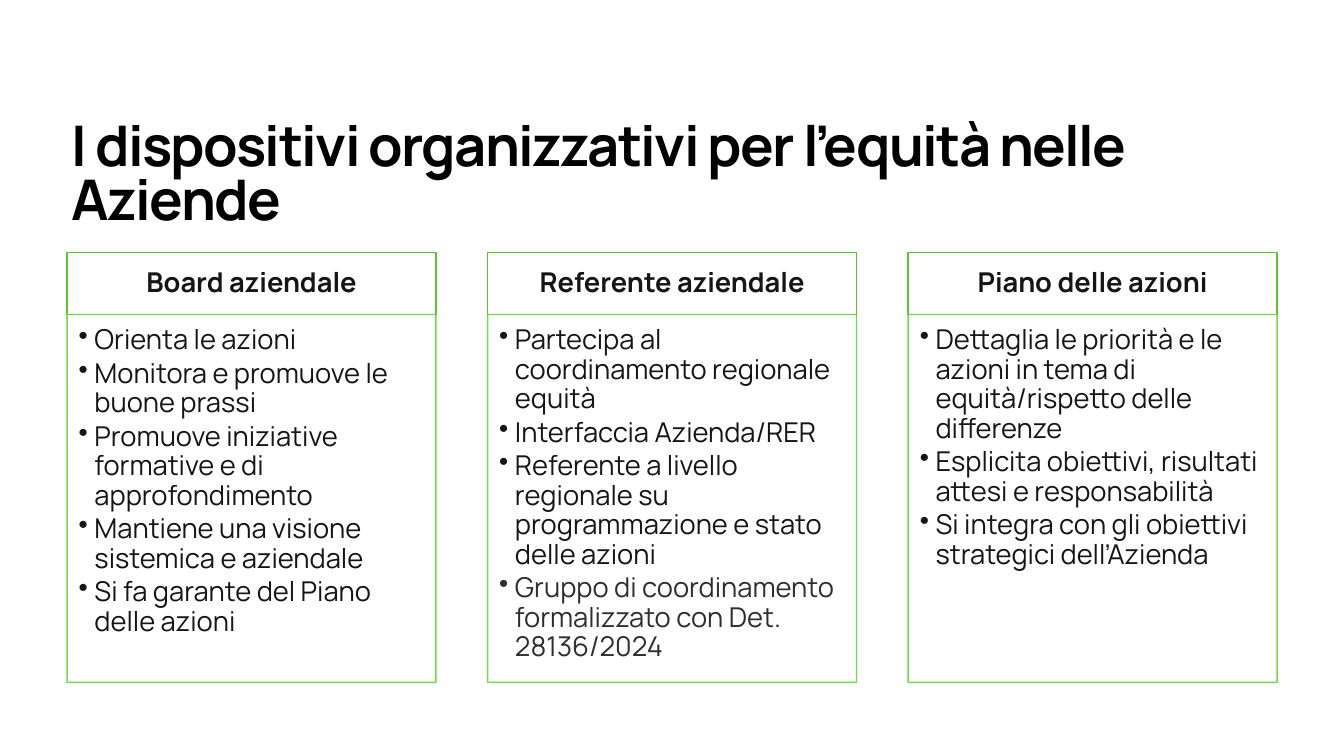
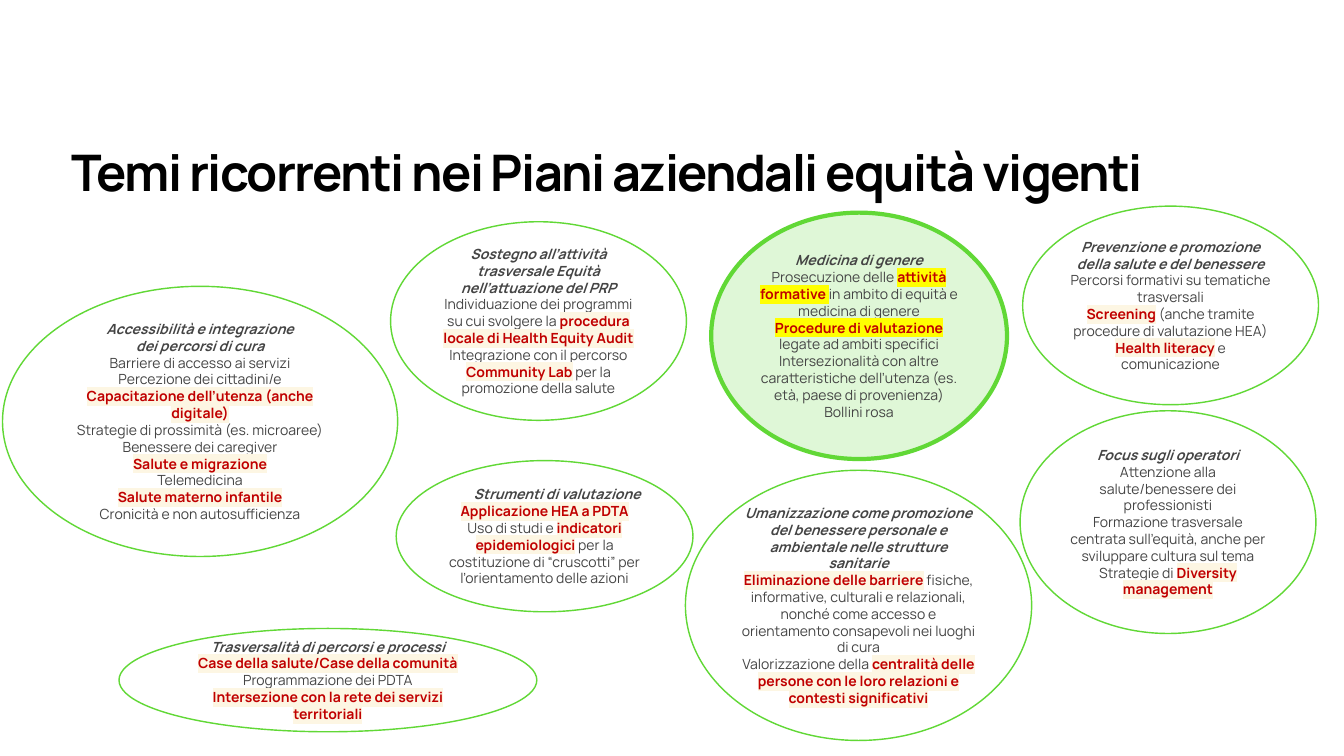
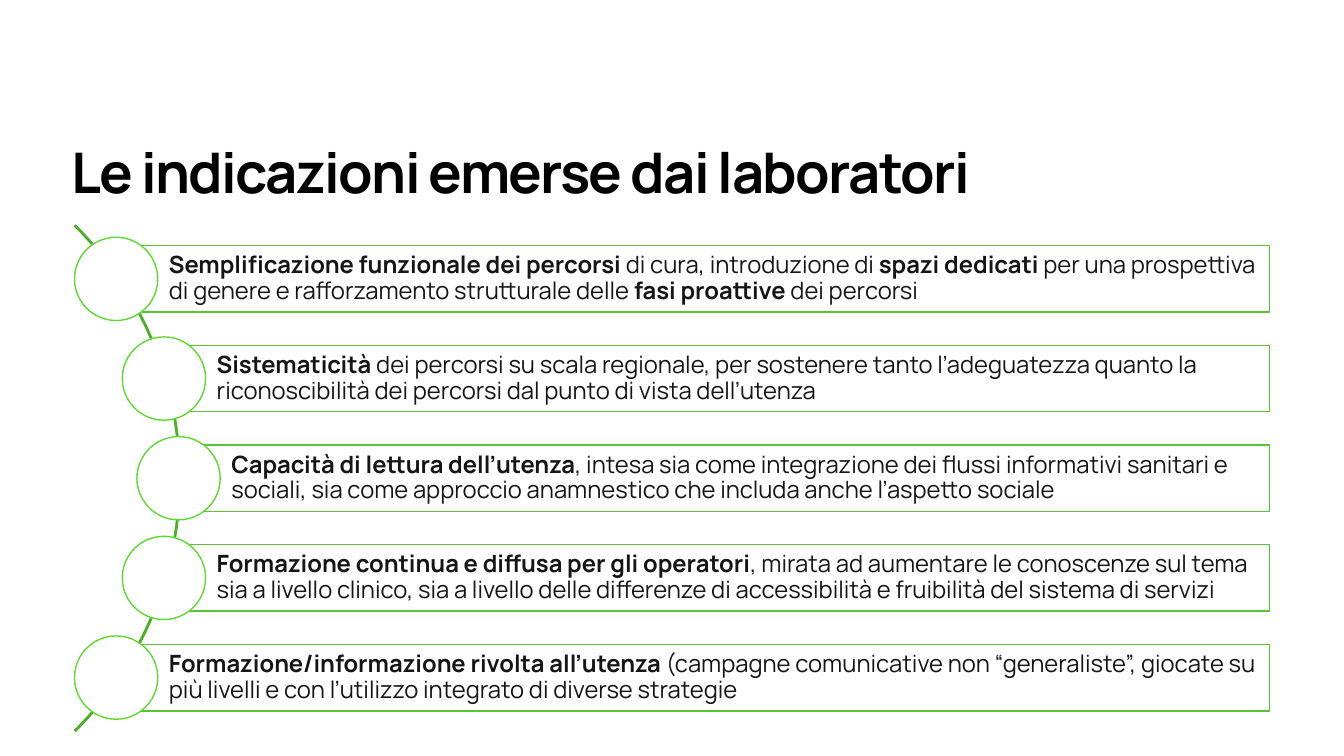
from dataclasses import dataclass, replace
from typing import Optional

from pptx import Presentation
from pptx.dml.color import RGBColor
from pptx.enum.shapes import MSO_SHAPE as Preset
from pptx.enum.text import MSO_ANCHOR as Anchor, PP_ALIGN as Align
from pptx.oxml.ns import qn
from pptx.oxml.xmlchemy import OxmlElement
from pptx.util import Pt

FONT = "Manrope"
WHITE, BLACK, INK, SOFT_INK, GREY = "FFFFFF", "000000", "151515", "2E2E2E", "444444"
GREEN, BAR_GREEN, ARC_GREEN, PALE_GREEN = "61D836", "58C431", "4EAD2B", "DFF7D7"
RED, CREAM, YELLOW = "C00000", "FDF6E3", "FFFF00"


@dataclass(frozen=True)
class Style:
    size: float
    color: str
    bold: bool = False
    italic: bool = False
    highlight: Optional[str] = None
    tracking: float = 0


@dataclass(frozen=True)
class Line:
    text: str
    style: Style
    strong: Optional[Style] = None
    align: Align = Align.LEFT
    spacing: float = 1.0
    after: float = 0
    first_indent: float = 0
    bullet: bool = False


@dataclass(frozen=True)
class Box:
    left: float
    top: float
    width: float
    height: float


@dataclass(frozen=True)
class Card:
    heading: str
    points: tuple[str, ...]
    last_color: str = INK


@dataclass(frozen=True)
class Theme:
    box: Box
    headings: tuple[str, ...]
    points: tuple[str, ...]
    fill: Optional[str] = None
    border: float = 2
    highlight: str = CREAM
    heading_indent: float = 0


@dataclass(frozen=True)
class Recommendation:
    left: float
    text: str


TITLE = Style(80, BLACK, bold=True, tracking=-2.3)
CARD_TEXT = Style(39, INK)
THEME_TEXT = Style(20, GREY)
BAR_TEXT = Style(34, INK)

CARDS = (
    Card("Board aziendale", (
        "Orienta le azioni",
        "Monitora e promuove le buone prassi",
        "Promuove iniziative formative e di approfondimento",
        "Mantiene una visione sistemica e aziendale",
        "Si fa garante del Piano delle azioni",
    )),
    Card("Referente aziendale", (
        "Partecipa al coordinamento regionale equità",
        "Interfaccia Azienda/RER",
        "Referente a livello regionale su programmazione e stato delle azioni",
        "Gruppo di coordinamento formalizzato con Det. 28136/2024",
    ), SOFT_INK),
    Card("Piano delle azioni", (
        "Dettaglia le priorità e le azioni in tema di equità/rispetto delle differenze",
        "Esplicita obiettivi, risultati attesi e responsabilità",
        "Si integra con gli obiettivi strategici dell’Azienda",
    )),
)

THEMES = (
    Theme(Box(3.6, 409, 564.5, 386), ("Accessibilità e integrazione", "dei percorsi di cura"), (
        "Barriere di accesso ai servizi",
        "Percezione dei cittadini/e",
        "*Capacitazione dell’utenza (anche digitale)*",
        "Strategie di prossimità (es. microaree)",
        "Benessere dei caregiver",
        "*Salute e migrazione*",
        "Telemedicina",
        "*Salute materno infantile*",
        "Cronicità e non autosufficienza",
    )),
    Theme(Box(558, 316.8, 422.6, 283.7),
          ("Sostegno all’attività trasversale Equità nell’attuazione del PRP",), (
        "Individuazione dei programmi su cui svolgere la *procedura locale di Health Equity Audit*",
        "Integrazione con il percorso *Community Lab* per la promozione della salute",
    )),
    Theme(Box(566, 658, 424, 216), ("Strumenti di valutazione",), (
        "*Applicazione HEA a PDTA*",
        "Uso di studi e *indicatori epidemiologici* per la costituzione di “cruscotti” "
        "per l’orientamento delle azioni",
    ), heading_indent=36),
    Theme(Box(1016, 303.8, 422.6, 352), ("Medicina di genere",), (
        "Prosecuzione delle *attività formative *in ambito di equità e medicina di genere",
        "*Procedure di valutazione* legate ad ambiti specifici",
        "Intersezionalità con altre caratteristiche dell’utenza (es. età, paese di provenienza)",
        "Bollini rosa",
    ), PALE_GREEN, 6, YELLOW),
    Theme(Box(979.2, 671.8, 494.6, 386),
          ("Umanizzazione come promozione del benessere personale e ambientale "
           "nelle strutture sanitarie",), (
        "*Eliminazione delle barriere* fisiche, informative, culturali e relazionali, "
        "nonché come accesso e orientamento consapevoli nei luoghi di cura",
        "Valorizzazione della *centralità delle persone con le loro relazioni "
        "e contesti significativi*",
    )),
    Theme(Box(1461, 294.5, 422.6, 283.7),
          ("Prevenzione e promozione della salute e del benessere",), (
        "Percorsi formativi su tematiche trasversali",
        "*Screening* (anche tramite procedure di valutazione HEA)",
        "*Health literacy* e comunicazione",
    )),
    Theme(Box(1457.3, 586.8, 422.6, 318.2), ("Focus sugli operatori",), (
        "Attenzione alla salute/benessere dei professionisti",
        "Formazione trasversale centrata sull’equità, anche per sviluppare cultura sul tema",
        "Strategie di *Diversity management*",
    )),
    Theme(Box(170, 897.8, 596.9, 147.6), ("Trasversalità di percorsi e processi",), (
        "*Case della salute/Case della comunità*",
        "Programmazione dei PDTA",
        "*Intersezione con la rete dei servizi territoriali*",
    )),
)

RECOMMENDATIONS = (
    Recommendation(165.9, "*Semplificazione funzionale dei percorsi *di cura, introduzione di "
                   "*spazi dedicati *per una prospettiva di genere e rafforzamento strutturale "
                   "delle *fasi proattive *dei percorsi"),
    Recommendation(234.2, "*Sistematicità* dei percorsi su scala regionale, per sostenere tanto "
                   "l’adeguatezza quanto la riconoscibilità dei percorsi dal punto di vista "
                   "dell’utenza"),
    Recommendation(255.1, "*Capacità di lettura dell’utenza*, intesa sia come integrazione dei "
                   "flussi informativi sanitari e sociali, sia come approccio anamnestico che "
                   "includa anche l’aspetto sociale"),
    Recommendation(234.2, "*Formazione continua e diffusa per gli operatori*, mirata ad aumentare "
                   "le conoscenze sul tema sia a livello clinico, sia a livello delle differenze "
                   "di accessibilità e fruibilità del sistema di servizi"),
    Recommendation(165.9, "*Formazione/informazione rivolta all’utenza *(campagne comunicative non "
                   "“generaliste”, giocate su più livelli e con l’utilizzo integrato di diverse "
                   "strategie"),
)


def rgb(color: str) -> RGBColor:
    return RGBColor.from_string(color)


def style_run(run, style: Style) -> None:
    font = run.font
    font.name, font.size = FONT, Pt(style.size)
    font.bold, font.italic = style.bold, style.italic
    font.color.rgb = rgb(style.color)
    properties = run._r.get_or_add_rPr()
    if style.tracking:
        properties.set("spc", str(round(style.tracking * 100)))
    if style.highlight:
        highlight = OxmlElement("a:highlight")
        tint = OxmlElement("a:srgbClr")
        tint.set("val", style.highlight)
        highlight.append(tint)
        properties.find(qn("a:solidFill")).addnext(highlight)


def set_indent(paragraph, line: Line) -> None:
    properties = paragraph._p.get_or_add_pPr()
    hang = 22.5
    properties.set("marL", str(Pt(hang if line.bullet else 0)))
    properties.set("indent", str(Pt(-hang if line.bullet else line.first_indent)))
    if line.bullet:
        bullet = OxmlElement("a:buChar")
        bullet.set("char", "•")
        properties.append(bullet)


def write(shape, lines: list[Line], anchor: Anchor = Anchor.MIDDLE,
          insets: tuple[float, float, float, float] = (7.2, 3.6, 7.2, 3.6)) -> None:
    frame = shape.text_frame
    frame.word_wrap = True
    frame.vertical_anchor = anchor
    frame.margin_left, frame.margin_top, frame.margin_right, frame.margin_bottom = map(Pt, insets)
    for index, line in enumerate(lines):
        paragraph = frame.add_paragraph() if index else frame.paragraphs[0]
        set_indent(paragraph, line)
        paragraph.alignment = line.align
        paragraph.line_spacing = line.spacing
        paragraph.space_after = Pt(line.after)
        for position, piece in enumerate(line.text.split("*")):
            if piece:
                run = paragraph.add_run()
                run.text = piece
                style_run(run, line.strong if position % 2 else line.style)


def draw(slide, preset: Preset, box: Box, line: str, fill: Optional[str] = WHITE,
         border: float = 2, opacity: int = 100):
    shape = slide.shapes.add_shape(
        preset, Pt(box.left), Pt(box.top), Pt(box.width), Pt(box.height))
    shape.shadow.inherit = False
    if fill:
        shape.fill.solid()
        shape.fill.fore_color.rgb = rgb(fill)
    else:
        shape.fill.background()
    shape.line.color.rgb = rgb(line)
    shape.line.width = Pt(border)
    if opacity < 100:
        for color in shape._element.spPr.iter(qn("a:srgbClr")):
            alpha = OxmlElement("a:alpha")
            alpha.set("val", str(opacity * 1000))
            color.append(alpha)
    return shape


def add_titled_slide(deck, title: str, size: float = TITLE.size):
    slide = deck.slides.add_slide(deck.slide_layouts[6])
    heading = slide.shapes.add_textbox(Pt(95), Pt(203), Pt(1730), Pt(101))
    write(heading, [Line(title, replace(TITLE, size=size), spacing=0.8)])
    return slide


def add_card(slide, card: Card, left: float) -> None:
    top, width, header_height, body_height = 360.7, 527, 88.6, 525.6
    header = draw(slide, Preset.RECTANGLE, Box(left, top, width, header_height), BAR_GREEN)
    write(header, [Line(card.heading, replace(CARD_TEXT, bold=True), align=Align.CENTER,
                        spacing=0.9)], insets=(21.6, 12.2, 21.6, 12.2))
    body = draw(slide, Preset.RECTANGLE, Box(left, top + header_height, width, body_height),
                GREEN, opacity=90)
    colors = [INK] * (len(card.points) - 1) + [card.last_color]
    write(body, [Line(point, replace(CARD_TEXT, color=color), spacing=0.9, after=5.85, bullet=True)
                 for point, color in zip(card.points, colors)],
          Anchor.TOP, (16.6, 16.6, 21.6, 24.5))


def add_theme(slide, theme: Theme) -> None:
    bubble = draw(slide, Preset.OVAL, theme.box, GREEN, theme.fill, theme.border)
    heading_style = replace(THEME_TEXT, bold=True, italic=True)
    strong = Style(20, RED, bold=True, highlight=theme.highlight)
    headings = [Line(text, heading_style, align=Align.CENTER, first_indent=theme.heading_indent)
                for text in theme.headings]
    points = [Line(text, THEME_TEXT, strong, Align.CENTER) for text in theme.points]
    write(bubble, headings + points, insets=(4, 4, 4, 4))


def add_recommendation(slide, item: Recommendation, middle: float) -> None:
    right, height, diameter = 1813.7, 95, 119
    bar = draw(slide, Preset.RECTANGLE,
               Box(item.left, middle - height / 2, right - item.left, height), BAR_GREEN)
    write(bar, [Line(item.text, BAR_TEXT, replace(BAR_TEXT, bold=True), spacing=0.9)],
          insets=(75.4, 6.2, 6.2, 6.2))
    draw(slide, Preset.OVAL, Box(item.left - diameter / 2, middle - diameter / 2,
                                 diameter, diameter), GREEN)


def main() -> None:
    deck = Presentation()
    deck.slide_width, deck.slide_height = Pt(1920), Pt(1080)

    devices = add_titled_slide(deck, "I dispositivi organizzativi per l’equità nelle Aziende")
    for column, card in enumerate(CARDS):
        add_card(devices, card, 95.8 + 600.8 * column)

    topics = add_titled_slide(deck, "Temi ricorrenti nei Piani aziendali equità vigenti", 72)
    for theme in THEMES:
        add_theme(topics, theme)

    guidance = add_titled_slide(deck, "Le indicazioni emerse dai laboratori")
    arc = draw(guidance, Preset.BLOCK_ARC, Box(-764.6, 172, 1022.4, 1022.4), ARC_GREEN, None)
    for index, value in enumerate((189, 27, 0.002)):
        arc.adjustments[index] = value
    for row, item in enumerate(RECOMMENDATIONS):
        add_recommendation(guidance, item, 398.4 + 142.4 * row)

    deck.save("out.pptx")


if __name__ == "__main__":
    main()
